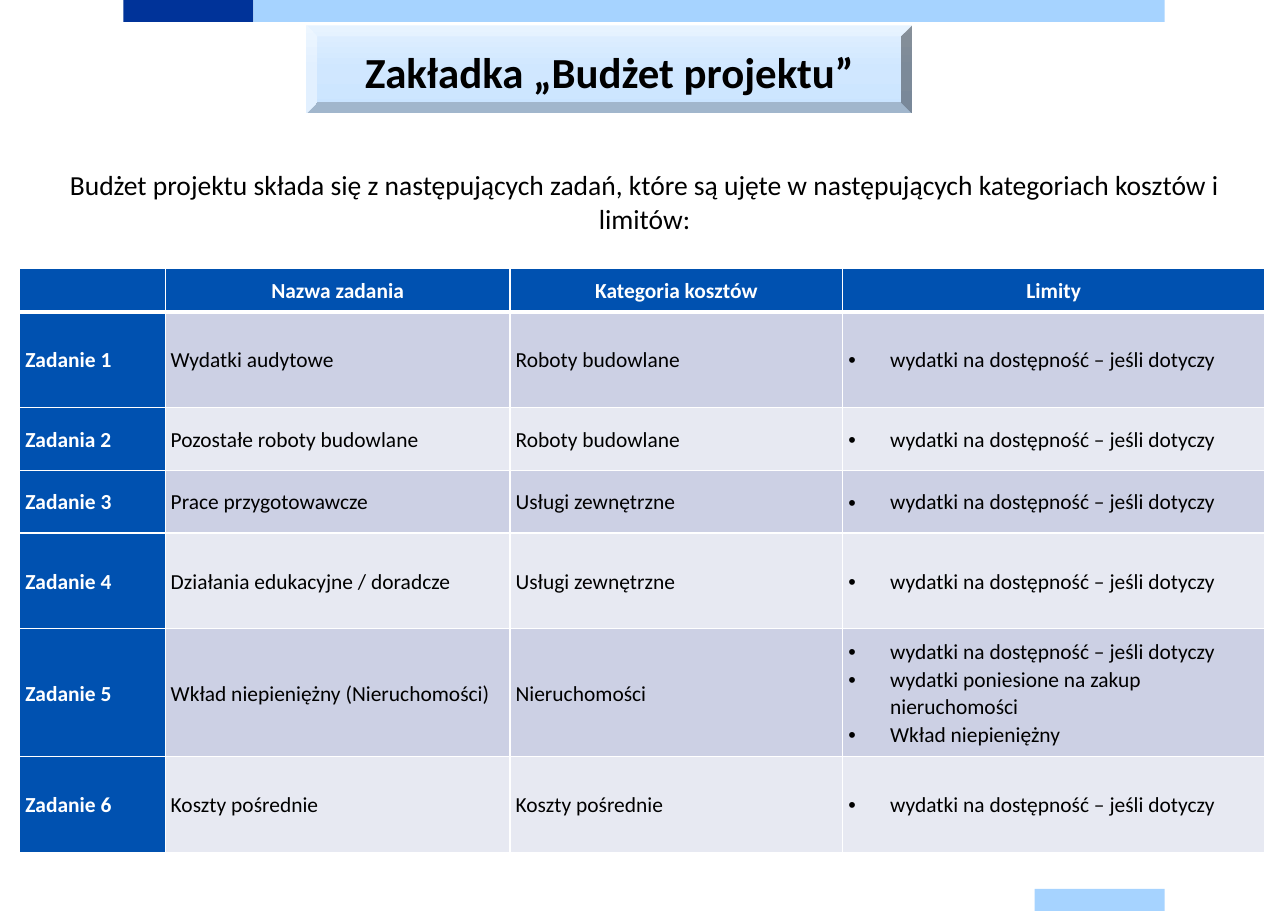
from copy import deepcopy
from dataclasses import dataclass

from lxml import etree
from pptx import Presentation
from pptx.dml.color import RGBColor
from pptx.enum.shapes import MSO_SHAPE
from pptx.enum.text import MSO_ANCHOR, PP_ALIGN
from pptx.oxml.ns import qn
from pptx.util import Inches, Pt

RECTANGLE, BEVEL = MSO_SHAPE.RECTANGLE, MSO_SHAPE.BEVEL
MIDDLE = MSO_ANCHOR.MIDDLE
LEFT, CENTER = PP_ALIGN.LEFT, PP_ALIGN.CENTER
TITLE_ONLY_LAYOUT = 5

TITLE = "Zakładka „Budżet projektu”"
INTRO = (
    "Budżet projektu składa się z następujących zadań, które są ujęte "
    "w następujących kategoriach kosztów i limitów:"
)
HEADERS = ["", "Nazwa zadania", "Kategoria kosztów", "Limity"]
ACCESSIBILITY = "wydatki na dostępność – jeśli dotyczy"
TASKS = [
    ("Zadanie 1", "Wydatki audytowe", "Roboty budowlane", [ACCESSIBILITY]),
    ("Zadania 2", "Pozostałe roboty budowlane", "Roboty budowlane", [ACCESSIBILITY]),
    ("Zadanie 3", "Prace przygotowawcze", "Usługi zewnętrzne", [ACCESSIBILITY]),
    ("Zadanie 4", "Działania edukacyjne / doradcze", "Usługi zewnętrzne", [ACCESSIBILITY]),
    ("Zadanie 5", "Wkład niepieniężny (Nieruchomości)", "Nieruchomości",
     [ACCESSIBILITY, "wydatki poniesione na zakup nieruchomości", "Wkład niepieniężny"]),
    ("Zadanie 6", "Koszty pośrednie", "Koszty pośrednie", [ACCESSIBILITY]),
]
COLUMN_WIDTHS = [1.32, 3.13, 3.02, 3.83]
ROW_HEIGHTS = [0.39, 0.87, 0.57, 0.57, 0.87, 1.16, 0.87]


@dataclass(frozen=True)
class Theme:
    font: str = "Calibri"
    title_size: int = 28
    intro_size: int = 18
    table_size: int = 14
    text: str = "000000"
    white: str = "FFFFFF"
    navy: str = "003399"
    sky: str = "A6D3FF"
    header: str = "0051B0"
    bands: tuple = ("CCD0E4", "E7E9F2")
    title_gradient: tuple = ((0, "E1F0FF"), (0.5, "D0E7FF"), (1, "CAE4FF"))


THEME = Theme()
BARS = [
    (1.12, 0, 1.18, THEME.navy),
    (2.3, 0, 8.27, THEME.sky),
    (9.39, 8.07, 1.18, THEME.sky),
]
BAR_HEIGHT = 0.2
TITLE_BOX = [Inches(value) for value in (2.78, 0.23, 5.5, 0.8)]


def style_paragraph(paragraph, size, color=THEME.text, bold=False, align=CENTER):
    paragraph.alignment = align
    font = paragraph.font
    font.name, font.size, font.bold = THEME.font, Pt(size), bold
    font.color.rgb = RGBColor.from_string(color)


def add_plain_shape(slide, preset, box):
    shape = slide.shapes.add_shape(preset, *box)
    shape.shadow.inherit = False
    shape.line.fill.background()
    return shape


def add_bars(slide):
    for left, top, width, color in BARS:
        box = [Inches(value) for value in (left, top, width, BAR_HEIGHT)]
        bar = add_plain_shape(slide, RECTANGLE, box)
        bar.fill.solid()
        bar.fill.fore_color.rgb = RGBColor.from_string(color)


def add_title(slide):
    """Place the title over a bevelled panel with a three-colour gradient."""
    panel = add_plain_shape(slide, BEVEL, TITLE_BOX)
    panel.fill.gradient()
    panel.fill.gradient_angle = 270
    stop_list = panel.element.find(".//" + qn("a:gsLst"))
    stop_list.insert(1, deepcopy(stop_list[0]))
    for stop, (position, color) in zip(panel.fill.gradient_stops, THEME.title_gradient):
        stop.position = position
        stop.color.rgb = RGBColor.from_string(color)

    title = slide.shapes.title
    title.element.addprevious(panel.element)
    title.left, title.top, title.width, title.height = TITLE_BOX
    frame = title.text_frame
    frame.text = TITLE
    frame.margin_left = frame.margin_right = frame.margin_top = frame.margin_bottom = 0
    frame.vertical_anchor = MIDDLE
    paragraph = frame.paragraphs[0]
    paragraph.line_spacing = Pt(36)
    style_paragraph(paragraph, THEME.title_size, bold=True)


def add_intro(slide):
    box = slide.shapes.add_textbox(Inches(0.34), Inches(1.48), Inches(11.02), Inches(0.71))
    box.text_frame.word_wrap = True
    box.text_frame.text = INTRO
    style_paragraph(box.text_frame.paragraphs[0], THEME.intro_size)


def set_borders(cell, top, bottom):
    properties = cell._tc.get_or_add_tcPr()
    for side, width in (("L", 1), ("R", 1), ("T", top), ("B", bottom)):
        line = etree.SubElement(properties, qn(f"a:ln{side}"), w=str(Pt(width)))
        fill = etree.SubElement(line, qn("a:solidFill"))
        etree.SubElement(fill, qn("a:srgbClr"), val=THEME.white)


def add_bullet(paragraph):
    properties = paragraph._p.get_or_add_pPr()
    indent = Inches(0.38)
    properties.set("marL", str(indent))
    properties.set("indent", str(-indent))
    etree.SubElement(properties, qn("a:buFont"), typeface="Arial")
    etree.SubElement(properties, qn("a:buChar"), char="•")


def fill_cell(cell, content, row, column):
    is_header = row == 0
    is_label = is_header or column == 0
    is_list = isinstance(content, list)
    set_borders(cell, top=3 if row == 1 else 1, bottom=3 if is_header else 1)
    cell.fill.solid()
    background = THEME.header if is_label else THEME.bands[(row - 1) % 2]
    cell.fill.fore_color.rgb = RGBColor.from_string(background)
    cell.vertical_anchor = MIDDLE
    cell.margin_left = cell.margin_right = Inches(0.05)
    cell.margin_top = cell.margin_bottom = 0
    cell.text_frame.text = "\n".join(content) if is_list else content
    for paragraph in cell.text_frame.paragraphs:
        paragraph.line_spacing = 1.07
        if is_list:
            add_bullet(paragraph)
        style_paragraph(
            paragraph,
            THEME.table_size,
            color=THEME.white if is_label else THEME.text,
            bold=is_label,
            align=CENTER if is_header else LEFT,
        )


def add_budget_table(slide):
    rows = [HEADERS, *TASKS]
    table = slide.shapes.add_table(
        len(rows), len(HEADERS), Inches(0.18), Inches(2.44),
        Inches(sum(COLUMN_WIDTHS)), Inches(sum(ROW_HEIGHTS)),
    ).table
    for column, width in zip(table.columns, COLUMN_WIDTHS):
        column.width = Inches(width)
    for row, height in zip(table.rows, ROW_HEIGHTS):
        row.height = Inches(height)
    for row, contents in enumerate(rows):
        for column, content in enumerate(contents):
            fill_cell(table.cell(row, column), content, row, column)


def main():
    presentation = Presentation()
    presentation.slide_width = Inches(11.69)
    presentation.slide_height = Inches(8.27)
    slide = presentation.slides.add_slide(presentation.slide_layouts[TITLE_ONLY_LAYOUT])
    add_bars(slide)
    add_title(slide)
    add_intro(slide)
    add_budget_table(slide)
    presentation.save("out.pptx")


if __name__ == "__main__":
    main()
